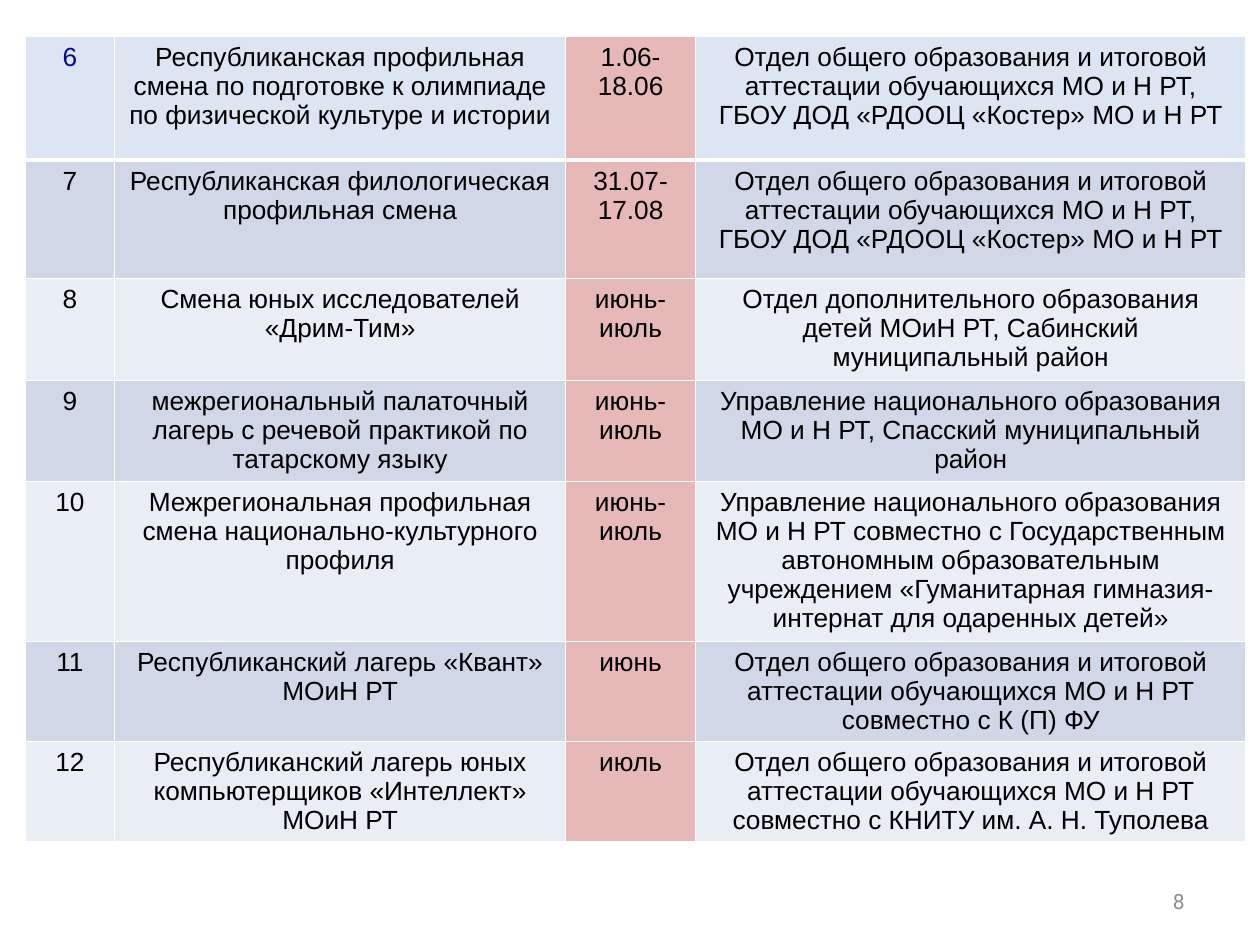
import pptx
import pptx.dml.color
import pptx.enum.text
import pptx.oxml.ns
import pptx.util
from lxml import etree

SLIDE_WIDTH, SLIDE_HEIGHT = 10, 7.5
COLUMN_WIDTHS = [0.71, 3.58, 1.03, 4.37]
ROW_HEIGHTS = [0.98, 0.94, 0.81, 0.8, 1.27, 0.79, 0.79]
DATE_COLUMN = 2
TOP_FILL, DATE_FILL = "DCE6F2", "E6B9B8"
BAND_FILLS = ["E9EDF4", "D0D8E8"]

GENERAL_DEPARTMENT = "Отдел общего образования и итоговой аттестации обучающихся МО и Н РТ"
CAMP_CENTRE = GENERAL_DEPARTMENT + ", ГБОУ ДОД «РДООЦ «Костер» МО и Н РТ"
NATIONAL_DEPARTMENT = "Управление национального образования МО и Н РТ"

CAMPS = [
    ("6", "Республиканская профильная смена по подготовке к олимпиаде по физической культуре и истории",
     "1.06-18.06", CAMP_CENTRE),
    ("7", "Республиканская филологическая профильная смена", "31.07-17.08", CAMP_CENTRE),
    ("8", "Смена юных исследователей «Дрим-Тим»", "июнь-июль",
     "Отдел дополнительного образования детей МОиН РТ, Сабинский муниципальный район"),
    ("9", "межрегиональный палаточный лагерь с речевой практикой по татарскому языку", "июнь-июль",
     NATIONAL_DEPARTMENT + ", Спасский муниципальный район"),
    ("10", "Межрегиональная профильная смена национально-культурного профиля", "июнь-июль",
     NATIONAL_DEPARTMENT + " совместно с Государственным автономным образовательным учреждением "
     "«Гуманитарная гимназия-интернат для одаренных детей»"),
    ("11", "Республиканский лагерь «Квант» МОиН РТ", "июнь",
     GENERAL_DEPARTMENT + " совместно с К (П) ФУ"),
    ("12", "Республиканский лагерь юных компьютерщиков «Интеллект» МОиН РТ", "июль",
     GENERAL_DEPARTMENT + " совместно с КНИТУ им. А. Н. Туполева"),
]


def color(value):
    return pptx.dml.color.RGBColor.from_string(value)


def write_text(frame, text, size=15, font="Arial", fill="000000", align="CENTER"):
    paragraph = frame.paragraphs[0]
    paragraph.alignment = getattr(pptx.enum.text.PP_ALIGN, align)
    run = paragraph.add_run()
    run.text = text
    run.font.size = pptx.util.Pt(size)
    run.font.name = font
    run.font.bold = False
    run.font.color.rgb = color(fill)


def set_borders(cell, **widths):
    properties = cell._tc.get_or_add_tcPr()
    for side in "LRTB":
        width = pptx.util.Pt(widths.get(side, 1))
        line = etree.SubElement(properties, pptx.oxml.ns.qn("a:ln" + side), w=str(width))
        solid = etree.SubElement(line, pptx.oxml.ns.qn("a:solidFill"))
        etree.SubElement(solid, pptx.oxml.ns.qn("a:srgbClr"), val="FFFFFF")


def cell_fill(row, column):
    if column == DATE_COLUMN:
        return DATE_FILL
    return TOP_FILL if row == 0 else BAND_FILLS[row % 2]


def add_camp_table(slide, left, top):
    lengths = (left, top, sum(COLUMN_WIDTHS), sum(ROW_HEIGHTS))
    table = slide.shapes.add_table(len(CAMPS), len(COLUMN_WIDTHS), *map(pptx.util.Inches, lengths)).table
    table.first_row = False
    table.horz_banding = False
    for column, width in zip(table.columns, COLUMN_WIDTHS):
        column.width = pptx.util.Inches(width)
    for row, (camp, height) in enumerate(zip(CAMPS, ROW_HEIGHTS)):
        table.rows[row].height = pptx.util.Inches(height)
        borders = {0: {"B": 3}, 1: {"T": 3}}.get(row, {})
        for column, text in enumerate(camp):
            cell = table.cell(row, column)
            set_borders(cell, **borders)
            cell.fill.solid()
            cell.fill.fore_color.rgb = color(cell_fill(row, column))
            write_text(cell.text_frame, text, fill="060696" if row == column == 0 else "000000")


def add_slide_number(slide, number):
    lengths = (7.17, 6.95, 2.33, 0.4)
    frame = slide.shapes.add_textbox(*map(pptx.util.Inches, lengths)).text_frame
    frame.word_wrap = True
    frame.vertical_anchor = pptx.enum.text.MSO_ANCHOR.MIDDLE
    write_text(frame, number, size=12, font="Roboto", fill="8C8C8C", align="RIGHT")


def main():
    presentation = pptx.Presentation()
    presentation.slide_width = pptx.util.Inches(SLIDE_WIDTH)
    presentation.slide_height = pptx.util.Inches(SLIDE_HEIGHT)
    slide = presentation.slides.add_slide(presentation.slide_layouts[6])
    add_camp_table(slide, 0.02 * SLIDE_WIDTH, 0.29)
    add_slide_number(slide, "8")
    presentation.save("out.pptx")


if __name__ == "__main__":
    main()
